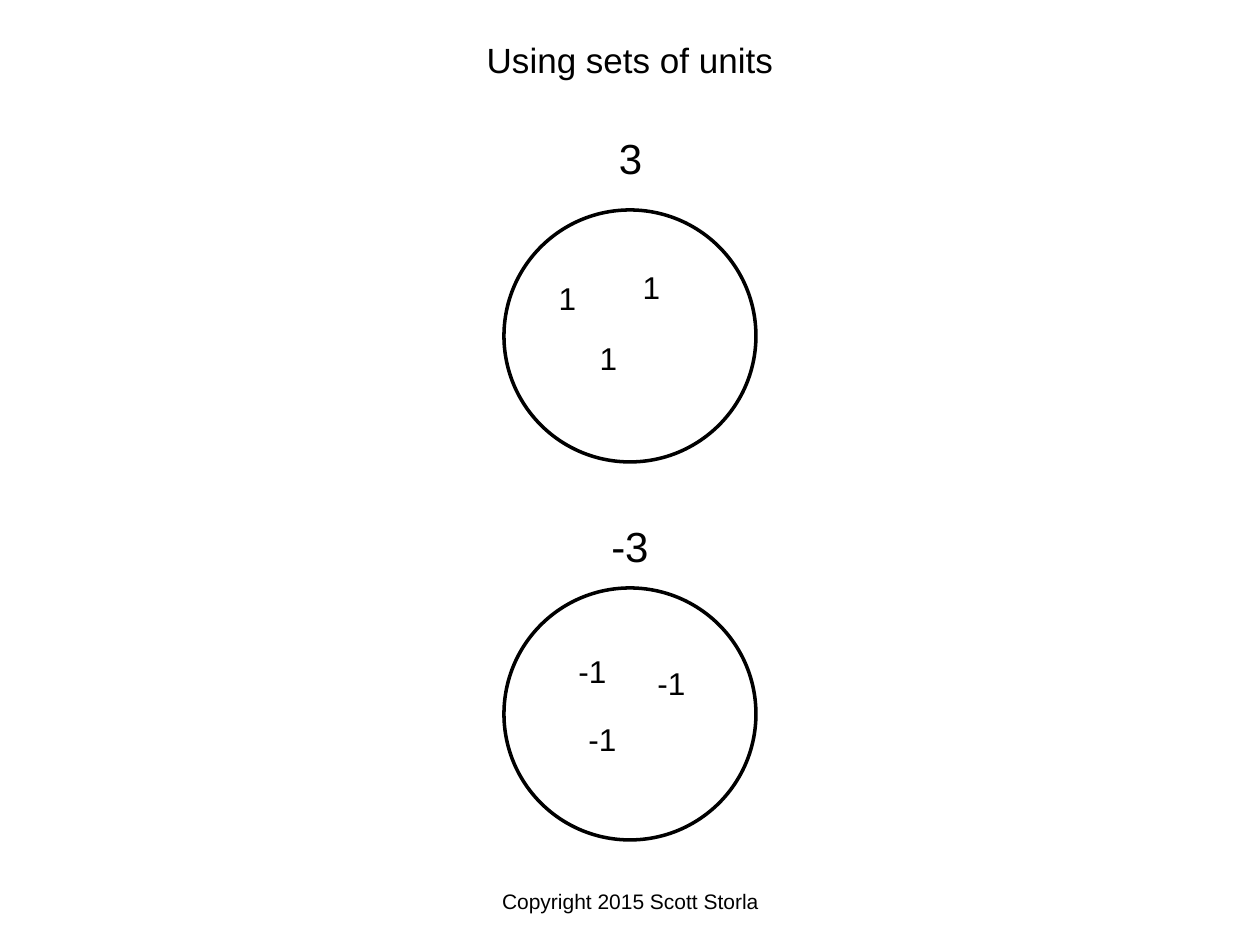
from pptx import Presentation
from pptx import util as u
from pptx.dml.color import RGBColor
from pptx.enum import shapes, text

PX = u.Inches(1) // 126
BLACK, WHITE = "000000", "FFFFFF"
CENTER_X, DIAMETER = 630, 252
UNIT_W, UNIT_H = 63, 50

# Each set: label, label box (top, width), circle top, unit, unit positions
SETS = [
    ("3", 126, 63, 210, "1", [(536, 273), (620, 262), (577, 333)]),
    ("-3", 514, 84, 588, "-1", [(561, 646), (640, 658), (571, 714)]),
]


def px(*lengths):
    return [n * PX for n in lengths]


def color(value):
    return RGBColor.from_string(value)


def write(sp, content, size):
    tf = sp.text_frame
    tf.word_wrap = True
    p = tf.paragraphs[0]
    p.alignment = text.PP_ALIGN.CENTER
    r = p.add_run()
    r.text = content
    for name, value in {"name": "Arial", "size": u.Pt(size)}.items():
        setattr(r.font, name, value)
    r.font.color.rgb = color(BLACK)
    return tf


def add_label(s, content, box, size):
    tf = write(s.shapes.add_textbox(*px(*box)), content, size)
    tf.auto_size = text.MSO_AUTO_SIZE.SHAPE_TO_FIT_TEXT


def add_white_shape(s, kind, box):
    sp = s.shapes.add_shape(kind, *px(*box))
    sp.shadow.inherit = False
    sp.fill.solid()
    sp.fill.fore_color.rgb = color(WHITE)
    sp.line.fill.background()
    return sp


def add_circle(s, top):
    box = (CENTER_X - DIAMETER // 2, top, DIAMETER, DIAMETER)
    sp = add_white_shape(s, shapes.MSO_SHAPE.OVAL, box)
    sp.line.color.rgb = color(BLACK)
    sp.line.width = u.Pt(2)


def add_footer(s, content):
    sp = add_white_shape(s, shapes.MSO_SHAPE.RECTANGLE, (431, 876, 399, 50))
    write(sp, content, 12).vertical_anchor = text.MSO_ANCHOR.MIDDLE


def add_set(s, label, label_top, label_w, circle_top, unit, positions):
    add_circle(s, circle_top)
    add_label(s, label, (CENTER_X - label_w // 2, label_top, label_w, 63), 24)
    for left, top in positions:
        add_label(s, unit, (left, top, UNIT_W, UNIT_H), 18)


def main():
    prs = Presentation()
    prs.slide_width, prs.slide_height = px(1260, 945)
    s = prs.slides.add_slide(prs.slide_layouts[6])

    # Footer, the two sets, then the title
    add_footer(s, "Copyright 2015 Scott Storla")
    for unit_set in SETS:
        add_set(s, *unit_set)
    add_label(s, "Using sets of units", (252, 32, 756, 55), 20)

    prs.save("out.pptx")


if __name__ == "__main__":
    main()
